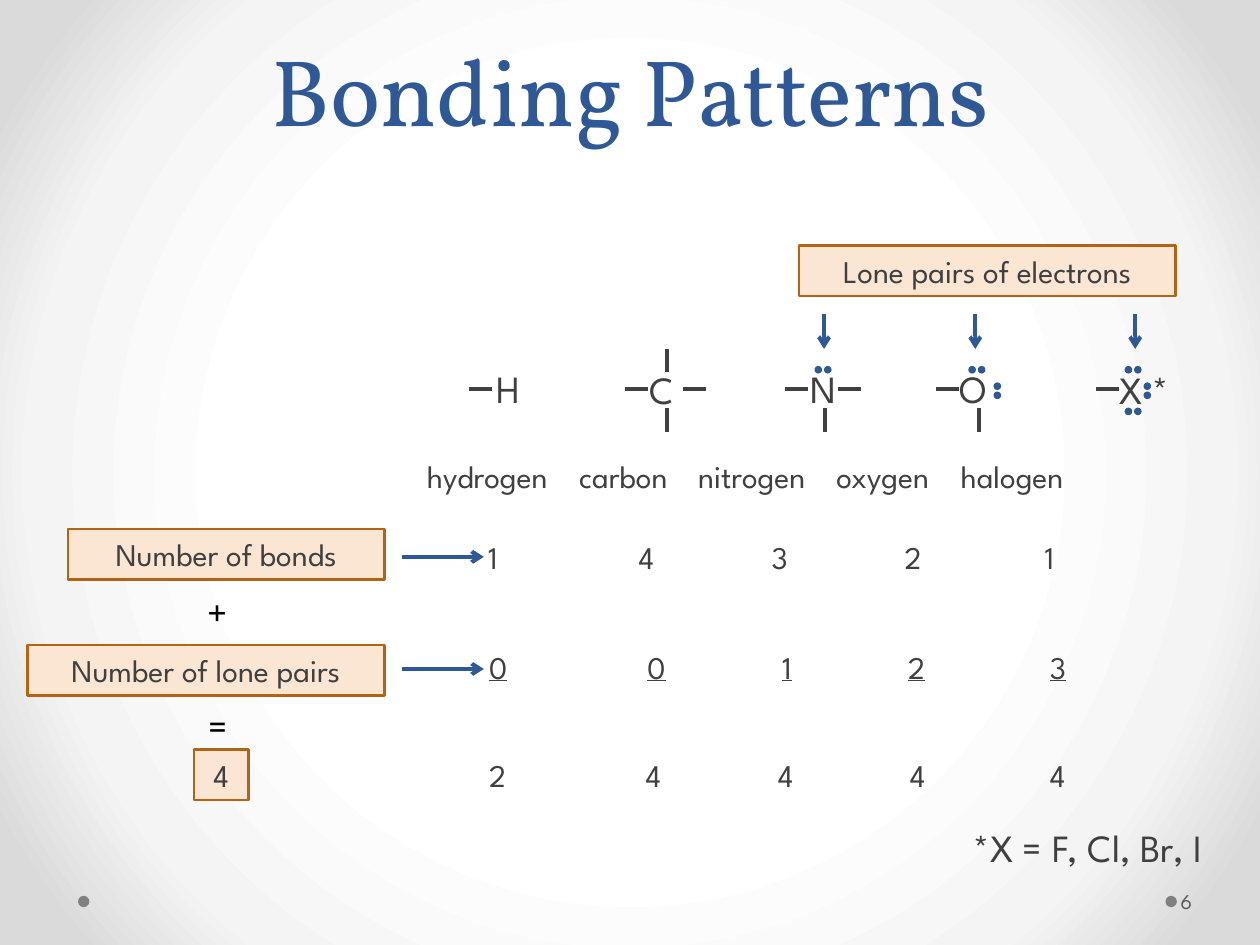
"""Build the slide on bonding patterns of common elements."""
from lxml import etree
from pptx import Presentation
from pptx.dml.color import RGBColor
from pptx.enum.shapes import MSO_CONNECTOR, MSO_SHAPE
from pptx.enum.text import MSO_ANCHOR, MSO_AUTO_SIZE, PP_ALIGN
from pptx.oxml.ns import qn
from pptx.util import Pt

LINE = MSO_CONNECTOR.STRAIGHT
RECT, OVAL = MSO_SHAPE.RECTANGLE, MSO_SHAPE.OVAL
LEFT, MID = PP_ALIGN.LEFT, PP_ALIGN.CENTER
TOP, CENTER, BASE = MSO_ANCHOR.TOP, MSO_ANCHOR.MIDDLE, MSO_ANCHOR.BOTTOM
GROW, FIXED = MSO_AUTO_SIZE.SHAPE_TO_FIT_TEXT, MSO_AUTO_SIZE.NONE
BLUE = RGBColor(0x2F, 0x58, 0x97)
DARK = RGBColor(0x40, 0x40, 0x40)
BLACK = RGBColor(0, 0, 0)
GRAY = RGBColor(0x80, 0x80, 0x80)
SLATE = RGBColor(0x59, 0x59, 0x59)
PEACH = RGBColor(0xFA, 0xE6, 0xD3)
RUST = RGBColor(0xB2, 0x63, 0x14)
SANS, SERIF = "League Spartan", "Vollkorn"


def write(shape, text, size, color=DARK, name=SANS, align=LEFT, **form):
    frame = shape.text_frame
    base = {"word_wrap": True, "vertical_anchor": TOP, "auto_size": GROW}
    for key, value in (base | form).items():
        setattr(frame, key, value)
    para = frame.paragraphs[0]
    para.alignment = align
    run = para.add_run()
    run.text = text
    run.font.color.rgb = color
    for key, value in {"size": Pt(size), "name": name}.items():
        setattr(run.font, key, value)
    return para


def draw(x1, y1, x2, y2, color=DARK, head=False):
    line = shapes.add_connector(LINE, Pt(x1), Pt(y1), Pt(x2), Pt(y2))
    line.line.color.rgb = color
    line.line.width = Pt(2.25)
    props = line._element.spPr
    if head:
        etree.SubElement(props.find(qn("a:ln")), qn("a:tailEnd"), type="arrow")
    etree.SubElement(props, qn("a:effectLst"))


deck = Presentation()
deck.slide_width, deck.slide_height = Pt(720), Pt(540)
slide = deck.slides.add_slide(deck.slide_layouts[5])
shapes = slide.shapes

slide.background.fill.gradient()
grad = slide._element.find(".//" + qn("a:gradFill"))
for child in list(grad):
    grad.remove(child)
stops = etree.SubElement(grad, qn("a:gsLst"))
for pos, tone in ((0, "FFFFFF"), (50, "FFFFFF"), (76, "F4F4F4"), (92, "DADADA"), (100, "DADADA")):
    stop = etree.SubElement(stops, qn("a:gs"), pos=str(pos * 1000))
    etree.SubElement(stop, qn("a:srgbClr"), val=tone)
round_fill = etree.SubElement(grad, qn("a:path"), {"path": "circle"})
etree.SubElement(round_fill, qn("a:fillToRect"), {side: "50000" for side in "ltrb"})

title = shapes.title
for key, value in {"left": 36, "top": 0, "width": 648, "height": 87}.items():
    setattr(title, key, Pt(value))
para = write(title, "Bonding Patterns", 54, BLUE, SERIF, MID,
             vertical_anchor=BASE, auto_size=FIXED)
para.line_spacing = Pt(58)

for text, x, y, wide in (
    ("Number of bonds", 38.9, 302.4, 180.7),
    ("Number of lone pairs", 15.8, 368.6, 203.8),
    ("4", 110.9, 428.4, 31),
    ("Lone pairs of electrons", 456.5, 140.4, 215.3),
):
    box = shapes.add_shape(RECT, Pt(x), Pt(y), Pt(wide), Pt(28.8))
    box.shadow.inherit = False
    box.fill.solid()
    box.fill.fore_color.rgb = PEACH
    box.line.color.rgb = RUST
    box.line.width = Pt(1.5)
    write(box, text, 18, align=MID)

for text, x, y in (("+", 111.6, 332.6), ("=", 112.3, 397.4)):
    box = shapes.add_textbox(Pt(x), Pt(y), Pt(28), Pt(33.8))
    write(box, text, 22, BLACK, word_wrap=False)

for y, words, tabs in (
    (257.8, ["hydrogen", "carbon", "nitrogen", "oxygen", "halogen"], [87, 155, 234, 305]),
    (303.8, ["", "1", "4", "3", "2", "1"], [35, 121, 197, 273, 353]),
    (366.5, ["", "0", "0", "1", "2", "3"], [35.5, 126, 203, 275, 356]),
    (428.4, ["", "2", "4", "4", "4", "4"], [35.5, 125, 200.5, 276, 356]),
):
    box = shapes.add_textbox(Pt(236.9), Pt(y), Pt(465), Pt(28.8))
    lead = "" if words[0] else "\t"
    para = write(box, lead or "\t".join(words), 18)
    if lead:
        run = para.add_run()
        run.text = "\t".join(words[1:])
        run.font.color.rgb = DARK
        marks = {"size": Pt(18), "name": SANS, "underline": y == 366.5}
        for key, value in marks.items():
            setattr(run.font, key, value)
    ruler = etree.SubElement(para._p.get_or_add_pPr(), qn("a:tabLst"))
    for tab in tabs:
        etree.SubElement(ruler, qn("a:tab"), pos=str(int(Pt(tab))), algn="l")

for text, x, y, wide in (
    ("H", 276.5, 205.2, 32.4),
    ("C", 364.3, 205.9, 32.4),
    ("N", 455.8, 205.2, 32.4),
    ("O", 541.4, 205.2, 32.4),
    ("X *", 632.9, 205.9, 44.6),
    ("*X = F, Cl, Br, I", 549.4, 467.3, 157.7),
):
    write(shapes.add_textbox(Pt(x), Pt(y), Pt(wide), Pt(33.8)), text, 22)

for y in (318.2, 382.3):
    draw(229.7, y, 276.5, y, BLUE, True)
for x in (470.9, 557.3, 648.7):
    draw(x, 179.3, x, 199.4, BLUE, True)
for x in (267.8, 357.1, 390.2, 448.6, 478.8, 535, 626.4):
    draw(x, 222.5, x + 13.3, 222.5)
for x, y in ((380.9, 199.4), (380.9, 233.3), (471.6, 233.3), (559.4, 233.3)):
    draw(x, y, x, y + 13.3)

dots = [(44.6, 511.9, 6.5, GRAY), (666, 511.9, 6.5, GRAY)]
for x, y in ((465.8, 209.5), (553.7, 209.5), (643, 209.5), (643, 233.3)):
    dots += [(x, y, 3.6, BLUE), (x + 5.4, y, 3.6, BLUE)]
for x in (568.1, 653.8):
    dots += [(x, 218.9, 3.6, BLUE), (x, 224.1, 3.6, BLUE)]
for x, y, size, color in dots:
    dot = shapes.add_shape(OVAL, Pt(x), Pt(y), Pt(size), Pt(size))
    dot.shadow.inherit = False
    dot.fill.solid()
    dot.fill.fore_color.rgb = color
    if color == BLUE:
        dot.line.color.rgb = BLUE
        dot.line.width = Pt(0.75)
    else:
        dot.line.fill.background()

page = shapes.add_textbox(Pt(672.5), Pt(500.4), Pt(43.9), Pt(28.8))
write(page, "6", 12, SLATE, vertical_anchor=CENTER, auto_size=FIXED, margin_left=Pt(2.2),
      margin_right=Pt(3.6))

deck.save("out.pptx")
